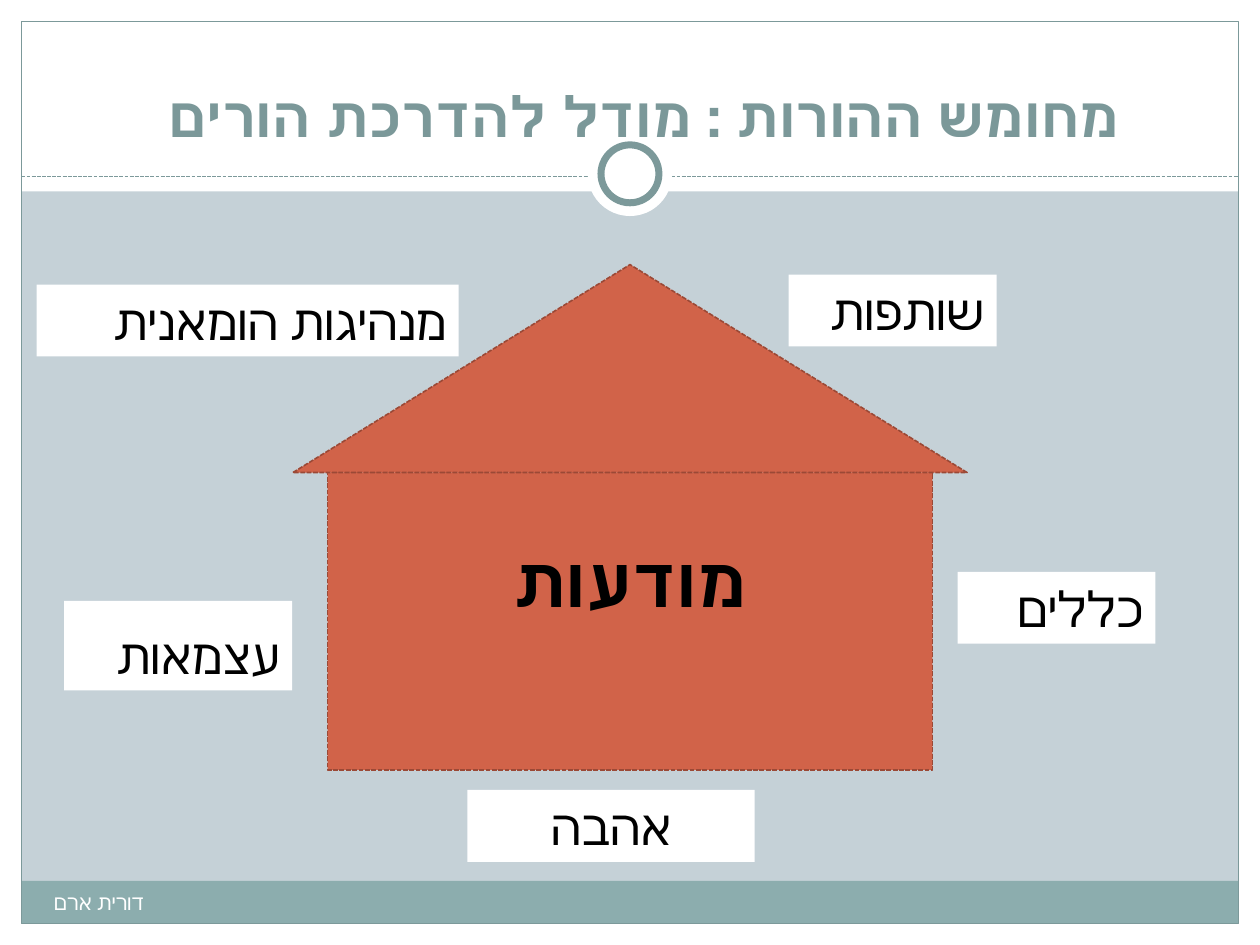
from lxml import etree
from pptx import Presentation
from pptx import util as u
from pptx.dml.color import RGBColor
from pptx.enum import dml, shapes, text
from pptx.oxml.ns import qn

# Content: places are left, top, width, height in percent of the slide
TITLE = "מחומש ההורות : מודל להדרכת הורים"
CORE = "מודעות"
AUTHOR = "דורית ארם"
PRINCIPLES = [
    ("אהבה", "center", (37.1, 83.6, 22.8, 7.6)),
    ("כללים", "right", (76, 60.53, 15.7, 7.6)),
    ("עצמאות", "right", (5.1, 63.6, 18.1, 9.47)),
    ("שותפות", "right", (62.6, 29.07, 16.5, 7.6)),
    ("מנהיגות הומאנית", "right", (2.9, 30.13, 33.5, 7.6)),
]

THEME = {
    "back": "C5D1D7", "paper": "FFFFFF", "band": "8CADAE", "frame": "7C999A",
    "title": "7B9899", "house": "D16349", "house_edge": "9B4936", "ink": "000000",
    "font": "TeX Gyre Schola", "core_font": "Arial",
    "title_size": 32, "core_size": 40, "label_size": 28, "author_size": 12,
}
WIDTH, HEIGHT = 10, 7.5
MARGIN_X, MARGIN_Y = 1.7, 2.27
HEADER, RULE, RING = 20.27, 18.67, 18.4
ALIGN = {"left": text.PP_ALIGN.LEFT, "center": text.PP_ALIGN.CENTER,
         "right": text.PP_ALIGN.RIGHT}
KIND = shapes.MSO_SHAPE

deck = Presentation()
deck.slide_width, deck.slide_height = u.Inches(WIDTH), u.Inches(HEIGHT)
slide = deck.slides.add_slide(deck.slide_layouts[6])
slide.background.fill.solid()
slide.background.fill.fore_color.rgb = RGBColor.from_string(THEME["back"])


def place(x, y, w, h):
    return (u.Inches(x * WIDTH / 100), u.Inches(y * HEIGHT / 100),
            u.Inches(w * WIDTH / 100), u.Inches(h * HEIGHT / 100))


def outline(line, color, points, dashed=False):
    line.color.rgb = RGBColor.from_string(THEME[color])
    line.width = u.Pt(points)
    if dashed:
        line.dash_style = dml.MSO_LINE.SQUARE_DOT


def draw(kind, area, fill=None, edge=None, points=0.75, dashed=False):
    part = slide.shapes.add_shape(kind, *place(*area))
    part.shadow.inherit = False
    if fill:
        part.fill.solid()
        part.fill.fore_color.rgb = RGBColor.from_string(THEME[fill])
    else:
        part.fill.background()
    if edge:
        outline(part.line, edge, points, dashed)
    else:
        part.line.fill.background()
    return part


def write(part, words, size, color, align, anchor, font="font", bold=False):
    frame = part.text_frame
    frame.word_wrap = True
    frame.vertical_anchor = anchor
    line = frame.paragraphs[0]
    line.text = words
    line.alignment = ALIGN[align]
    line.font.name, line.font.size = THEME[font], u.Pt(THEME[size])
    line.font.bold = bold
    line.font.color.rgb = RGBColor.from_string(THEME[color])
    line._p.get_or_add_pPr().set("rtl", "1")


def text_box(area):
    return slide.shapes.add_textbox(*place(*area))


def circle(diameter, **style):
    w, h = diameter / WIDTH * 100, diameter / HEIGHT * 100
    draw(KIND.OVAL, (50 - w / 2, RING - h / 2, w, h), **style)


# White margins, footer band and frame
for area in [(0, 100 - MARGIN_Y, 100, MARGIN_Y), (0, 0, 100, HEADER),
             (0, 0, MARGIN_X, 100), (100 - MARGIN_X, 0, MARGIN_X, 100)]:
    draw(KIND.RECTANGLE, area, "paper")
inner = 100 - 2 * MARGIN_X
draw(KIND.RECTANGLE, (MARGIN_X, 93.2, inner, 4.53), "band")
draw(KIND.RECTANGLE, (MARGIN_X, MARGIN_Y, inner, 100 - 2 * MARGIN_Y), edge="frame")

# Header rule with its ring
left, top, length, _ = place(MARGIN_X, RULE, inner, 0)
rule = slide.shapes.add_connector(shapes.MSO_CONNECTOR.STRAIGHT,
                                  left, top, left + length, top)
outline(rule.line, "frame", 0.75, dashed=True)
etree.SubElement(rule._element.spPr, qn("a:effectLst"))
circle(0.67, fill="paper")
circle(0.46, fill="paper", edge="frame", points=4)

write(text_box((8.6, 4.13, 85, 12.27)), TITLE, "title_size", "title", "center",
      text.MSO_ANCHOR.BOTTOM, bold=True)

# House: wall and roof share the centre line
for kind, width, top, height in [(KIND.RECTANGLE, 48, 50, 31.47),
                                 (KIND.ISOSCELES_TRIANGLE, 53.5, 28, 22)]:
    draw(kind, (50 - width / 2, top, width, height), "house", "house_edge", 0.9, True)

# Principles around the house
for words, align, area in PRINCIPLES:
    write(draw(KIND.RECTANGLE, area, "paper"), words, "label_size", "ink", align,
          text.MSO_ANCHOR.BOTTOM)

# Author and core idea
write(text_box((3.3, 93.47, 39.2, 5.33)), AUTHOR, "author_size", "paper", "left",
      text.MSO_ANCHOR.TOP)
write(text_box((36.6, 56.27, 26.8, 10.27)), CORE, "core_size", "ink", "center",
      text.MSO_ANCHOR.TOP, font="core_font", bold=True)

deck.save("out.pptx")
